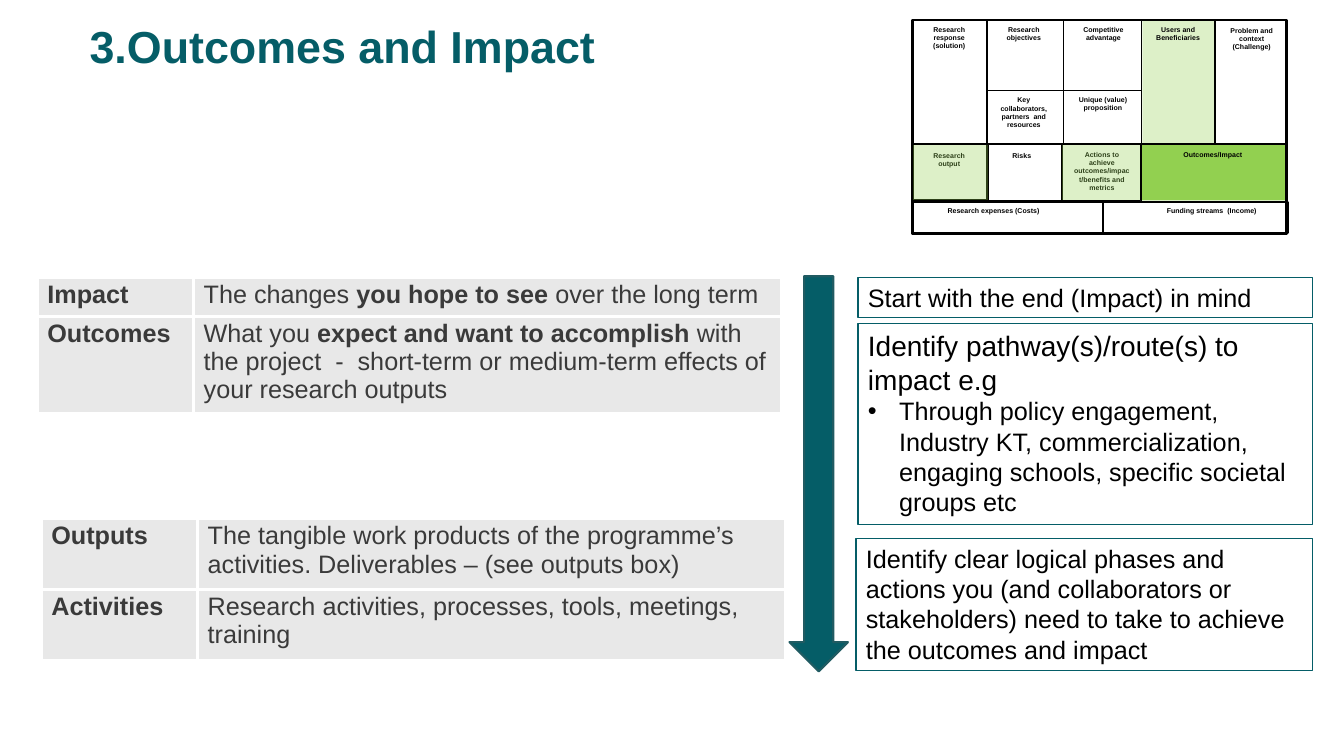
from dataclasses import dataclass

from lxml import etree
from pptx import Presentation
from pptx import util as u
from pptx.dml import color
from pptx.enum import shapes, text
from pptx.oxml import ns

PX = 9144


@dataclass(frozen=True)
class Theme:
    font: str = "Arial"
    teal: str = "055D67"
    edge: str = "205B62"
    grey: str = "E8E8E8"
    ink: str = "3A3A3A"
    black: str = "000000"
    white: str = "FFFFFF"
    green: str = "92D050"
    title: int = 32
    lead: int = 20
    body: int = 18
    tiny: int = 5


T = Theme()


def px(*vals):
    return [u.Emu(v * PX) for v in vals]


def rgb(code):
    return color.RGBColor.from_string(code)


def style(para, size, tone, bold=False):
    for run in para.runs:
        font = run.font
        font.name, font.size, font.bold = T.font, u.Pt(size), bold
        font.color.rgb = rgb(tone)


def block(slide, box, fill=None, line=None, width=1, alpha=None, kind="RECTANGLE"):
    shape = slide.shapes.add_shape(getattr(shapes.MSO_SHAPE, kind), *px(*box))
    shape.shadow.inherit = False
    if fill:
        shape.fill.solid()
        shape.fill.fore_color.rgb = rgb(fill)
        if alpha:
            tint = shape.fill._xPr.find(".//" + ns.qn("a:srgbClr"))
            etree.SubElement(tint, ns.qn("a:alpha")).set("val", str(alpha * 1000))
    else:
        shape.fill.background()
    if line:
        shape.line.color.rgb = rgb(line)
        shape.line.width = u.Pt(width)
    else:
        shape.line.fill.background()
    return shape


def label(slide, box, words, size=T.tiny, tone=T.black, align="CENTER"):
    frame = slide.shapes.add_textbox(*px(*box)).text_frame
    frame.word_wrap = True
    para = frame.paragraphs[0]
    para.text = words
    para.alignment = getattr(text.PP_ALIGN, align)
    style(para, size, tone, True)
    return para


def note(slide, box, lines):
    frame = block(slide, box, line=T.teal, width=0.75).text_frame
    frame.word_wrap = True
    frame.vertical_anchor = text.MSO_ANCHOR.TOP
    for i, (words, size, dot) in enumerate(lines):
        para = frame.add_paragraph() if i else frame.paragraphs[0]
        para.text = words
        para.alignment = text.PP_ALIGN.LEFT
        if dot:
            props = para._p.get_or_add_pPr()
            props.set("marL", str(31 * PX))
            props.set("indent", str(-31 * PX))
            etree.SubElement(props, ns.qn("a:buFont")).set("typeface", T.font)
            etree.SubElement(props, ns.qn("a:buChar")).set("char", "•")
        style(para, size, T.black)


def border(cell):
    props = cell._tc.get_or_add_tcPr()
    for i, side in enumerate(("lnL", "lnR", "lnT", "lnB")):
        line = etree.Element(ns.qn("a:" + side), w=str(u.Pt(2.25)))
        fill = etree.SubElement(line, ns.qn("a:solidFill"))
        etree.SubElement(fill, ns.qn("a:srgbClr"), val=T.white)
        props.insert(i, line)


def table(slide, left, top, highs, rows):
    grid = slide.shapes.add_table(2, 2, *px(left, top, 738, sum(highs))).table
    grid.first_row = grid.horz_banding = False
    for col, wide in zip(grid.columns, px(155, 583)):
        col.width = wide
    for r, (high, row) in enumerate(zip(px(*highs), rows)):
        grid.rows[r].height = high
        for c, parts in enumerate(row):
            cell = grid.cell(r, c)
            cell.margin_top, cell.margin_bottom = px(3, 3)
            cell.fill.solid()
            cell.fill.fore_color.rgb = rgb(T.grey)
            border(cell)
            para = cell.text_frame.paragraphs[0]
            for part in parts:
                para.add_run().text = part
            style(para, T.body, T.ink, c == 0)
            if len(parts) > 1:
                para.runs[1].font.bold = True


def canvas(slide):
    block(slide, (1133, 20, 72, 123), T.green, alpha=31)
    block(slide, (1132, 143, 145, 56), T.green)
    for box, words in (
        ((905, 145, 73, 27), "Research output"),
        ((1055, 144, 76, 52), "Actions to achieve outcomes/impact/benefits and metrics"),
        ((906, 20, 71, 44), "Research response (solution)"),
        ((1207, 21, 69, 35), "Problem and context (Challenge)"),
        ((978, 20, 75, 35), "Research objectives"),
        ((1134, 20, 69, 35), "Users and Beneficiaries"),
        ((910, 200, 151, 27), "Research expenses (Costs)"),
        ((1132, 200, 140, 19), "Funding streams  (Income)"),
        ((1134, 144, 138, 19), "Outcomes/Impact"),
        ((1054, 20, 81, 44), "Competitive advantage"),
        ((1055, 90, 78, 27), "Unique (value) proposition"),
        ((980, 90, 71, 52), "Key collaborators, partners  and resources"),
        ((977, 145, 73, 35), "Risks"),
    ):
        label(slide, box, words)
    for box, width in (
        ((905, 20, 371, 212), 1.5),
        ((1055, 90, 77, 53), 1),
        ((1132, 20, 73, 123), 1),
        ((1055, 20, 77, 123), 1),
        ((979, 20, 76, 123), 1),
        ((905, 199, 189, 32), 1.5),
        ((1132, 143, 145, 57), 1),
        ((905, 200, 372, 31), 1.5),
        ((905, 143, 74, 56), 1.5),
        ((979, 143, 75, 56), 1),
    ):
        block(slide, box, line=T.black, width=width)
    rule = slide.shapes.add_connector(
        shapes.MSO_CONNECTOR.STRAIGHT, *px(979, 90, 1055, 90))
    rule.line.color.rgb = rgb(T.black)
    rule.line.width = u.Pt(1)
    etree.SubElement(rule._element.spPr, ns.qn("a:effectLst"))
    block(slide, (905, 143, 75, 56), T.green, T.black, 0.75, 31)
    block(slide, (1053, 143, 78, 56), T.green, T.black, 1, 31)


def main():
    deck = Presentation()
    deck.slide_width, deck.slide_height = px(1333, 750)
    slide = deck.slides.add_slide(deck.slide_layouts[6])
    title = label(slide, (79, 20, 820, 104), "3.Outcomes and Impact",
                  T.title, T.teal, "LEFT")
    title.line_spacing = 0.9
    table(slide, 37, 275, (39, 92), (
        (("Impact",),
         ("The changes ", "you hope to see ", "over the long term")),
        (("Outcomes",),
         ("What you ", "expect and want to accomplish ",
          "with the project  -  short-term or medium-term effects of "
          "your research outputs")),
    ))
    table(slide, 41, 515, (70, 70), (
        (("Outputs",),
         ("The tangible work products of the programme’s activities. "
          "Deliverables – (see outputs box)",)),
        (("Activities",),
         ("Research activities, processes, tools, meetings, training",)),
    ))
    note(slide, (851, 275, 451, 40),
         [("Start with the end (Impact) in mind", T.body, False)])
    note(slide, (851, 321, 451, 199), [
        ("Identify pathway(s)/route(s) to impact e.g", T.lead, False),
        ("Through policy engagement, Industry KT, commercialization, "
         "engaging schools, specific societal groups etc", T.body, True),
    ])
    note(slide, (849, 534, 453, 131), [
        ("Identify clear logical phases and actions you (and collaborators "
         "or stakeholders) need to take to achieve the outcomes and impact",
         T.body, False),
    ])
    block(slide, (783, 274, 58, 392), T.teal, T.edge, 1.5, kind="DOWN_ARROW")
    canvas(slide)


    deck.save("out.pptx")


if __name__ == "__main__":
    main()
